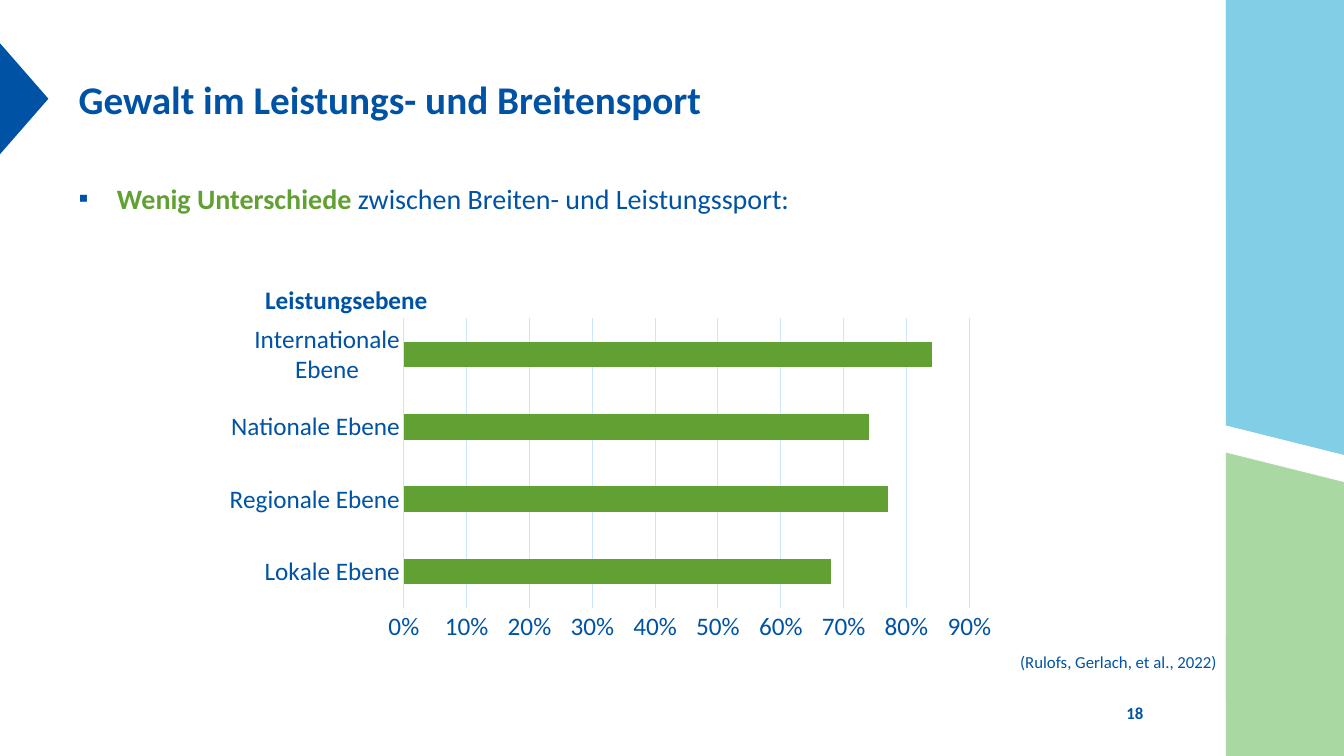
from dataclasses import dataclass

from lxml import etree
from pptx import Presentation
from pptx.chart.data import CategoryChartData
from pptx.dml.color import RGBColor
from pptx.enum.chart import XL_CHART_TYPE, XL_TICK_MARK
from pptx.enum.shapes import MSO_SHAPE
from pptx.enum.text import MSO_ANCHOR, PP_ALIGN
from pptx.oxml.ns import qn
from pptx.util import Inches, Pt

BAR = XL_CHART_TYPE.BAR_CLUSTERED
NO_TICK = XL_TICK_MARK.NONE
RECT, SLANT, WEDGE = MSO_SHAPE.RECTANGLE, MSO_SHAPE.PARALLELOGRAM, MSO_SHAPE.ISOSCELES_TRIANGLE
TOP, MIDDLE = MSO_ANCHOR.TOP, MSO_ANCHOR.MIDDLE
LEFT, RIGHT = PP_ALIGN.LEFT, PP_ALIGN.RIGHT


@dataclass(frozen=True)
class Theme:
    font: str = "Calibri"
    blue: str = "0053A4"
    green: str = "61A032"
    sky: str = "81CEE7"
    mint: str = "A9D8A2"
    grid: str = "CBE5FF"
    head: int = 28
    body: int = 20
    label: int = 18
    small: int = 12


THEME = Theme()


def color(code):
    return RGBColor.from_string(code)


def style(font, size, code=THEME.blue, bold=False):
    font.name, font.size, font.bold = THEME.font, Pt(size), bold
    font.color.rgb = color(code)


def put(shape, box):
    shape.left, shape.top, shape.width, shape.height = map(Inches, box)


def bullet(para, mark, indent):
    props = para._p.get_or_add_pPr()
    props.set("marL", str(Inches(indent)))
    props.set("indent", str(-Inches(indent)))
    tint = etree.SubElement(props, qn("a:buClr"))
    etree.SubElement(tint, qn("a:srgbClr"), val=THEME.blue)
    etree.SubElement(props, qn("a:buFont"), typeface="Arial")
    etree.SubElement(props, qn("a:buChar"), char=mark)


def write(shape, *parts, size, align=LEFT, anchor=TOP, side=0.1, mark=None):
    """Fill a shape with one paragraph of (text, colour, bold) parts."""
    frame = shape.text_frame
    frame.word_wrap = True
    frame.vertical_anchor = anchor
    frame.margin_left = frame.margin_right = Inches(side)
    para = frame.paragraphs[0]
    para.alignment = align
    para.space_before = Pt(0)
    if mark:
        bullet(para, mark, 0.38)
    for text, code, bold in parts:
        run = para.add_run()
        run.text = text
        style(run.font, size, code, bold)


def label(slide, box, text, bold=False, **form):
    shape = slide.shapes.add_textbox(*map(Inches, box))
    write(shape, (text, THEME.blue, bold), size=THEME.small, align=RIGHT, **form)


def block(slide, kind, box, code, turn=0):
    shape = slide.shapes.add_shape(kind, *map(Inches, box))
    shape.rotation = turn
    shape.shadow.inherit = False
    shape.fill.solid()
    shape.fill.fore_color.rgb = color(code)
    shape.line.fill.background()
    return shape


def decor(slide):
    panels = (
        (THEME.mint, (12.16, 6.31, 1.2, 1.19), (11.39, 5.26, 2.74, 1.2)),
        (THEME.sky, (12.16, 0, 1.2, 1.97), (10.5, 1.66, 4.52, 1.2)),
    )
    for code, base, slant in panels:
        block(slide, RECT, base, code)
        block(slide, SLANT, slant, code, 270).adjustments[0] = 0.25
    block(slide, WEDGE, (-0.31, 0.74, 1.1, 0.48), THEME.blue, 90)


def layout(node, index, inner=False, **spots):
    """Set a manual layout, in shares of the chart frame."""
    for old in node.findall(qn("c:layout")):
        node.remove(old)
    outer = etree.Element(qn("c:layout"))
    node.insert(index, outer)
    manual = etree.SubElement(outer, qn("c:manualLayout"))
    if inner:
        etree.SubElement(manual, qn("c:layoutTarget"), val="inner")
    for name in ("x", "y"):
        etree.SubElement(manual, qn(f"c:{name}Mode"), val="edge")
    for name, value in spots.items():
        etree.SubElement(manual, qn(f"c:{name}"), val=str(value))


def stroke(line):
    line.color.rgb = color(THEME.grid)
    line.width = Pt(0.75)


def bars(slide, box, title, rows):
    data = CategoryChartData(number_format="0%")
    data.categories = list(rows)
    data.add_series("Series 1", list(rows.values()))
    chart = slide.shapes.add_chart(BAR, *map(Inches, box), data).chart
    style(chart.font, THEME.label)
    chart.has_legend = False

    # Title and plot area
    head = chart.chart_title
    head.text_frame.text = title
    style(head.text_frame.paragraphs[0].runs[0].font, THEME.label, bold=True)
    layout(head._element, 1, x=0.06, y=0.07)
    area = chart._chartSpace.chart.plotArea
    layout(area, 0, inner=True, x=0.24, y=0.17, w=0.71, h=0.72)

    # Bars
    plot = chart.plots[0]
    plot.gap_width = 182
    plot.vary_by_categories = False
    fill = plot.series[0].format.fill
    fill.solid()
    fill.fore_color.rgb = color(THEME.green)

    # Axes
    names, scale = chart.category_axis, chart.value_axis
    for axis in (names, scale):
        axis.major_tick_mark = axis.minor_tick_mark = NO_TICK
        style(axis.tick_labels.font, THEME.label)
    stroke(names.format.line)
    stroke(scale.major_gridlines.format.line)
    scale.format.line.fill.background()
    scale.minimum_scale, scale.maximum_scale, scale.major_unit = 0, 0.9, 0.1
    scale.tick_labels.number_format = "0%"
    scale.tick_labels.number_format_is_linked = False


def main():
    deck = Presentation()
    deck.slide_width, deck.slide_height = Inches(13.33), Inches(7.5)
    slide = deck.slides.add_slide(deck.slide_layouts[1])
    decor(slide)

    # Title and list
    title, body = slide.shapes.title, slide.placeholders[1]
    put(title, (0.68, 0.43, 10.76, 1.1))
    write(title, ("Gewalt im Leistungs- und Breitensport", THEME.blue, True),
          size=THEME.head, anchor=MIDDLE)
    put(body, (0.68, 1.75, 10.76, 4.86))
    write(body, ("Wenig Unterschiede ", THEME.green, True),
          ("zwischen Breiten- und Leistungssport:", THEME.blue, False),
          size=THEME.body, mark="▪")

    # Chart
    bars(slide, (2.11, 2.48, 7.9, 3.99), "Leistungsebene", {
        "Lokale Ebene": 0.68,
        "Regionale Ebene": 0.77,
        "Nationale Ebene": 0.74,
        "Internationale Ebene": 0.84,
    })

    # Source and page number
    label(slide, (10.05, 6.42, 2.02, 0.32), "(Rulofs, Gerlach, et al., 2022)", side=0)
    label(slide, (10.71, 6.9, 0.73, 0.35), "18", bold=True, anchor=MIDDLE)
    deck.save("out.pptx")


if __name__ == "__main__":
    main()
